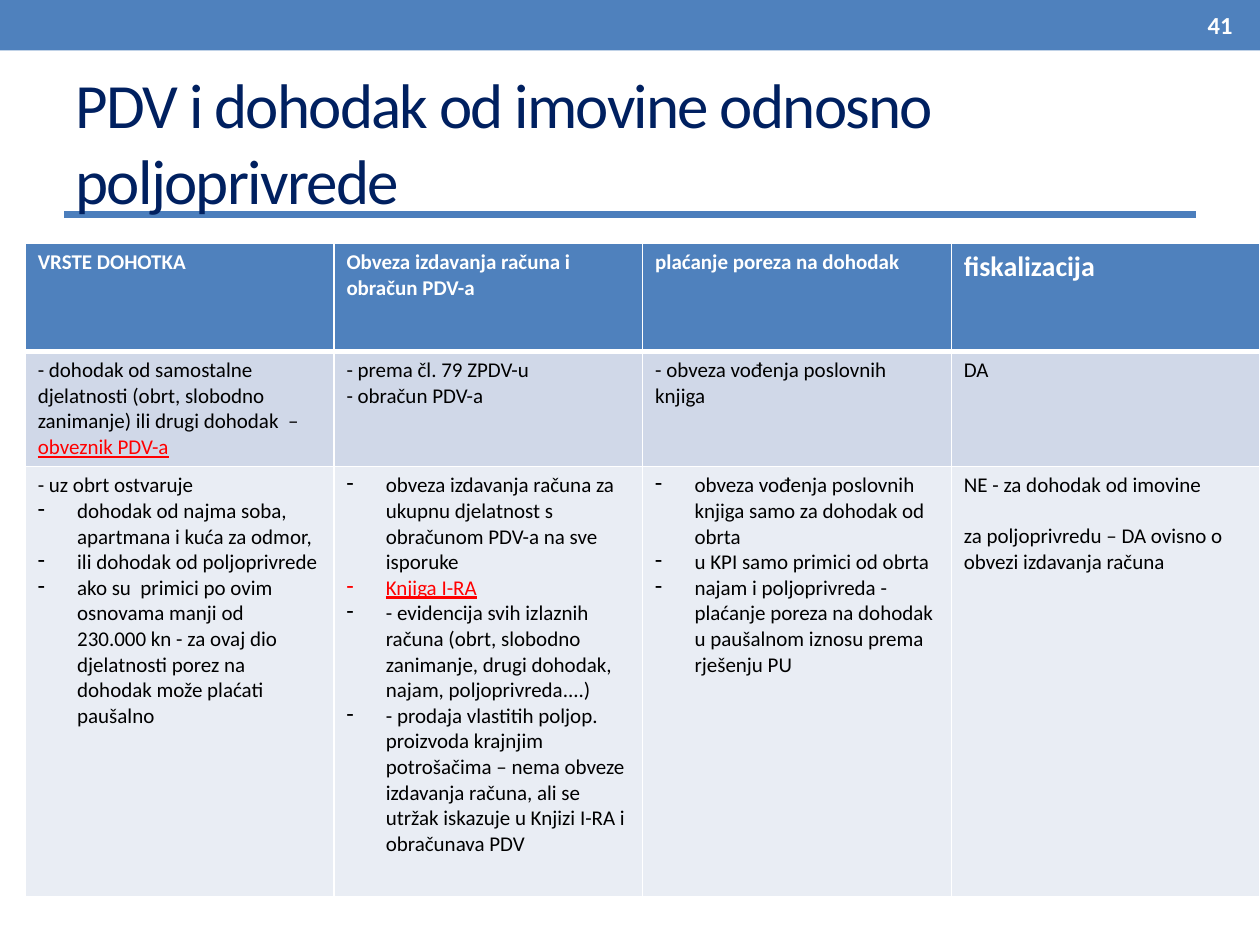
"""Build the slide on VAT and income from property or farming."""
from lxml.etree import SubElement
from pptx import Presentation
from pptx.dml.color import RGBColor
from pptx.enum.shapes import MSO_CONNECTOR, MSO_SHAPE
from pptx.enum.text import MSO_ANCHOR, MSO_AUTO_SIZE, PP_ALIGN
from pptx.oxml.ns import qn
from pptx.util import Pt

BLUE = RGBColor(0x4F, 0x81, 0xBD)
RULE = RGBColor(0x4B, 0x7E, 0xBC)
NAVY = RGBColor(0x00, 0x20, 0x60)
WHITE = RGBColor(0xFF, 0xFF, 0xFF)
BLACK = RGBColor(0, 0, 0)
RED = RGBColor(0xFF, 0, 0)
FILLS = [BLUE, RGBColor(0xD0, 0xD8, 0xE8), RGBColor(0xE9, 0xED, 0xF4)]
BULLET, MARK, GAP = "* ", "|", "^"

ROWS = [
    [
        ["VRSTE DOHOTKA"],
        ["Obveza izdavanja računa i obračun PDV-a"],
        ["plaćanje poreza na dohodak"],
        ["fiskalizacija"],
    ],
    [
        ["- dohodak od samostalne djelatnosti (obrt, slobodno zanimanje) "
         "ili drugi dohodak  – |obveznik PDV-a"],
        ["- prema čl. 79 ZPDV-u", "- obračun PDV-a"],
        ["- obveza vođenja poslovnih knjiga"],
        ["DA"],
    ],
    [
        ["- uz obrt ostvaruje",
         "* dohodak od najma soba, apartmana i kuća za odmor,",
         "* ili dohodak od poljoprivrede",
         "* ako su  primici po ovim osnovama manji od  230.000 kn - za ovaj dio "
         "djelatnosti porez na dohodak može plaćati paušalno"],
        ["* obveza izdavanja računa za ukupnu djelatnost s obračunom PDV-a "
         "na sve isporuke",
         "* |Knjiga I-RA",
         "* - evidencija svih izlaznih računa (obrt, slobodno zanimanje, "
         "drugi dohodak, najam, poljoprivreda....)",
         "* - prodaja vlastitih poljop. proizvoda krajnjim potrošačima – nema "
         "obveze izdavanja računa, ali se utržak iskazuje u Knjizi I-RA "
         "i obračunava PDV"],
        ["* obveza vođenja poslovnih knjiga samo za dohodak od obrta",
         "* u KPI samo primici od obrta",
         "* najam i poljoprivreda - plaćanje poreza na dohodak u paušalnom "
         "iznosu prema rješenju PU"],
        ["NE - za dohodak od imovine",
         "^za poljoprivredu – DA ovisno o obvezi izdavanja računa"],
    ],
]


def add_run(para, text, size, color, bold=False):
    run = para.add_run()
    run.text = text
    font = run.font
    font.name, font.size, font.bold = "Calibri", Pt(size), bold
    font.color.rgb = color
    return run


def add_edge(cell, side, width):
    edge = SubElement(cell._tc.get_or_add_tcPr(), qn("a:ln" + side), w=str(Pt(width)))
    fill = SubElement(edge, qn("a:solidFill"))
    SubElement(fill, qn("a:srgbClr"), val=str(WHITE))


deck = Presentation()
deck.slide_width, deck.slide_height = Pt(720), Pt(540)
slide = deck.slides.add_slide(deck.slide_layouts[5])
shapes = slide.shapes

band = shapes.add_shape(MSO_SHAPE.RECTANGLE, 0, 0, Pt(720), Pt(28.8))
band.shadow.inherit = False
band.fill.solid()
band.fill.fore_color.rgb = BLUE
band.line.fill.background()

rule = shapes.add_connector(
    MSO_CONNECTOR.STRAIGHT, Pt(36.7), Pt(122.4), Pt(683.3), Pt(122.4))
rule.line.color.rgb = RULE
rule.line.width = Pt(4)
SubElement(rule._element.spPr, qn("a:effectLst"))

title = shapes.title
title.left, title.top, title.width, title.height = Pt(36), Pt(41.8), Pt(648), Pt(77.8)
frame = title.text_frame
frame.auto_size = MSO_AUTO_SIZE.NONE
frame.vertical_anchor = MSO_ANCHOR.MIDDLE
para = frame.paragraphs[0]
para.alignment = PP_ALIGN.LEFT
run = add_run(para, "PDV i dohodak od imovine odnosno poljoprivrede", 36, NAVY)
run.font._element.set("spc", "-100")
shapes._spTree.append(title._element)

table = shapes.add_table(3, 4, Pt(14.4), Pt(139), Pt(705.6), Pt(369.4)).table
for row, height in zip(table.rows, [61.9, 61.9, 245.6]):
    row.height = Pt(height)
for col in table.columns:
    col.width = Pt(176.4)

for r, row in enumerate(ROWS):
    head = r == 0
    for c, lines in enumerate(row):
        cell = table.cell(r, c)
        for side in "LRTB":
            thick = (r, side) in [(0, "B"), (1, "T")]
            add_edge(cell, side, 3 if thick else 1)
        cell.fill.solid()
        cell.fill.fore_color.rgb = FILLS[r]
        frame = cell.text_frame
        size = 16 if head and c == 3 else 12
        for i, line in enumerate(lines):
            para = frame.add_paragraph() if i else frame.paragraphs[0]
            if line.startswith(BULLET):
                props = para._p.get_or_add_pPr()
                props.set("marL", str(Pt(22.5)))
                props.set("indent", str(-Pt(22.5)))
                SubElement(props, qn("a:buChar"), char="-")
            if line.startswith(GAP):
                para.space_before = Pt(14.6)
            parts = line.removeprefix(BULLET).removeprefix(GAP).split(MARK)
            for n, part in enumerate(parts):
                if part:
                    color = RED if n else WHITE if head else BLACK
                    run = add_run(para, part, size, color, head)
                    run.font.underline = n > 0

page = shapes.add_textbox(Pt(654.5), Pt(1.4), Pt(56.9), Pt(25.9))
frame = page.text_frame
frame.word_wrap = True
frame.vertical_anchor = MSO_ANCHOR.MIDDLE
para = frame.paragraphs[0]
para.alignment = PP_ALIGN.RIGHT
add_run(para, "41", 14, WHITE, True)

deck.save("out.pptx")
